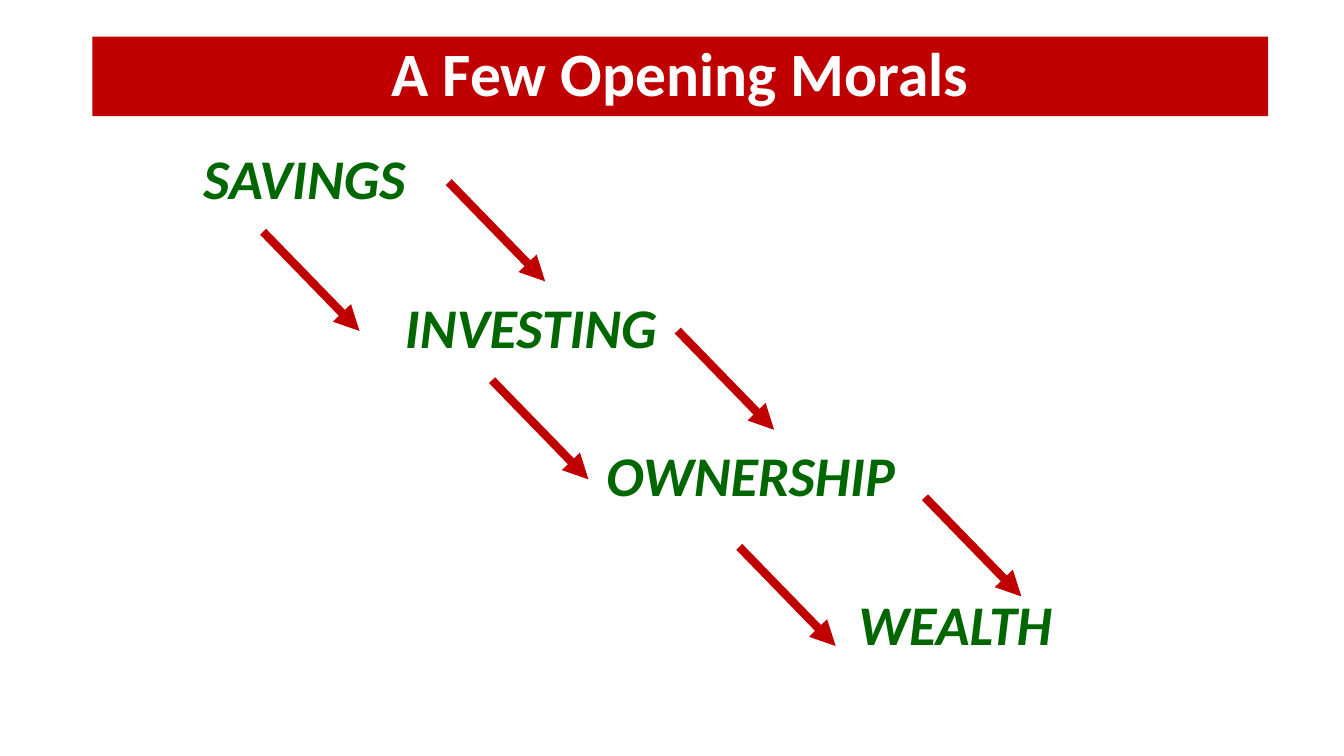
from lxml import etree
from pptx import Presentation
from pptx.dml.color import RGBColor
from pptx.enum import shapes, text
from pptx.oxml import ns
from pptx.util import Cm, Pt

RED = RGBColor(0xC0, 0x00, 0x00)
GREEN = RGBColor(0x00, 0x66, 0x00)
WHITE = RGBColor(0xFF, 0xFF, 0xFF)
FONT = "Calibri"

HEADING = "A Few Opening Morals"
STAGES = [
    ("SAVINGS", 2.54),
    ("INVESTING", 7.62),
    ("OWNERSHIP", 12.7),
    ("WEALTH", 19.05),
]
ARROW_PAIRS = [(6.63, 5.84), (12.4, 9.58), (18.63, 13.78)]
PAIR_OFFSETS = [(0, 0), (4.68, -1.25)]
ARROW_RUN, ARROW_DROP = 2.43, 2.5


def place(part, left, top, width, height):
    part.left, part.top = Cm(left), Cm(top)
    part.width, part.height = Cm(width), Cm(height)


def style(font, size, color, italic=False):
    font.name, font.size = FONT, Pt(size)
    font.bold, font.italic = True, italic
    font.color.rgb = color


def add_arrow(slide, left, top):
    arrow = slide.shapes.add_connector(
        shapes.MSO_CONNECTOR.STRAIGHT,
        Cm(left), Cm(top), Cm(left + ARROW_RUN), Cm(top + ARROW_DROP))
    arrow.line.color.rgb = RED
    arrow.line.width = Pt(6)
    etree.SubElement(arrow.line._get_or_add_ln(), ns.qn("a:tailEnd"), type="triangle")
    etree.SubElement(arrow._element.spPr, ns.qn("a:effectLst"))


deck = Presentation()
deck.slide_width, deck.slide_height = Cm(33.87), Cm(19.05)
slide = deck.slides.add_slide(deck.slide_layouts[1])

heading = slide.shapes.title
place(heading, 2.33, 0.92, 29.63, 2.01)
heading.fill.solid()
heading.fill.fore_color.rgb = RED
heading.text_frame.text = HEADING
heading.text_frame.auto_size = text.MSO_AUTO_SIZE.NONE
heading_line = heading.text_frame.paragraphs[0]
heading_line.alignment = text.PP_ALIGN.CENTER
heading_line.line_spacing = 0.9
style(heading_line.runs[0].font, 44, WHITE)

stages = slide.placeholders[1]
place(stages, 2.33, 3.68, 29.21, 13.46)
stages.text_frame.text = "\n".join(name for name, indent in STAGES)
stages.text_frame.auto_size = text.MSO_AUTO_SIZE.NONE
for row, (stage, (name, indent)) in enumerate(zip(stages.text_frame.paragraphs, STAGES)):
    stage.line_spacing = 0.9
    stage.space_before = Pt(63 if row else 0)
    properties = stage._p.get_or_add_pPr()
    properties.set("marL", str(Cm(indent)))
    properties.set("indent", "0")
    etree.SubElement(properties, ns.qn("a:buNone"))
    style(stage.runs[0].font, 40, GREEN, italic=True)

for left, top in ARROW_PAIRS:
    for across, down in PAIR_OFFSETS:
        add_arrow(slide, left + across, top + down)

deck.save("out.pptx")
